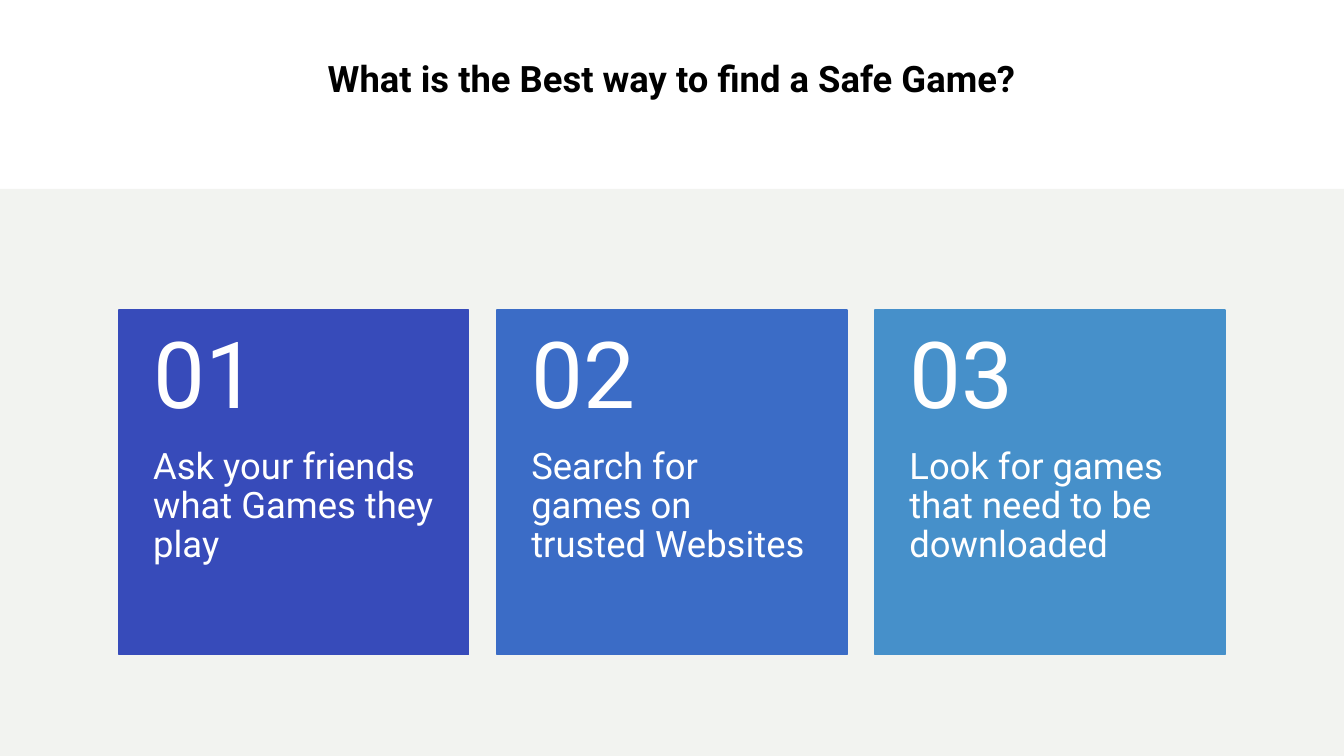
from pptx import Presentation
from pptx import util as u
from pptx.dml.color import RGBColor
from pptx.enum import shapes, text

WHITE = RGBColor(0xFF, 0xFF, 0xFF)
BLACK = RGBColor(0x00, 0x00, 0x00)
PALE_GREY = RGBColor(0xF2, 0xF3, 0xF0)
INDIGO = RGBColor(0x37, 0x4B, 0xBA)
BLUE = RGBColor(0x3B, 0x6C, 0xC6)
SKY = RGBColor(0x46, 0x90, 0xCA)

FONT = "Roboto"
WIDTH, HEIGHT = 13.33, 7.5
MARGIN = 1.18
CARD_WIDTH, CARD_STEP = 3.47, 3.75
NUMBER_SHARE = 0.4  # part of a card's height given to its number

TITLE = "What is the Best way to find a Safe Game?"
CARDS = [
    ("01", "Ask your friends what Games they play", INDIGO),
    ("02", "Search for games on trusted Websites", BLUE),
    ("03", "Look for games that need to be downloaded", SKY),
]


def add_block(s, box, colour, outlined=False):
    sp = s.shapes.add_shape(shapes.MSO_SHAPE.RECTANGLE, *map(u.Inches, box))
    sp.shadow.inherit = False
    sp.fill.solid()
    sp.fill.fore_color.rgb = colour
    if outlined:
        sp.line.color.rgb = colour
        sp.line.width = u.Pt(1)
    else:
        sp.line.fill.background()


def add_text(s, box, words, size, colour, insets, anchor=text.MSO_ANCHOR.TOP):
    """Add a one-paragraph text box and return its paragraph."""
    tf = s.shapes.add_textbox(*map(u.Inches, box)).text_frame
    tf.word_wrap = True
    tf.vertical_anchor = anchor
    tf.margin_left, tf.margin_top, tf.margin_right, tf.margin_bottom = map(u.Inches, insets)
    p = tf.paragraphs[0]
    p.text = words
    p.font.name = FONT
    p.font.size = u.Pt(size)
    p.font.color.rgb = colour
    return p


def add_header(s, box):
    add_block(s, box, WHITE)
    left, top, width, height = box
    title_box = (left + MARGIN, top + 0.26 * height, width - 2 * MARGIN, 0.52 * height)
    p = add_text(s, title_box, TITLE, 26, BLACK, (0.1, 0.07, 0.1, 0.05))
    p.alignment = text.PP_ALIGN.CENTER
    p.font.bold = True


def add_card(s, box, number, advice, colour):
    add_block(s, box, colour, outlined=True)
    left, top, width, height = box
    split = NUMBER_SHARE * height
    advice_p = add_text(s, (left, top + split, width, height - split), advice, 26, WHITE,
                        (0.34, 0, 0.34, 0.36))
    number_p = add_text(s, (left, top, width, split), number, 66, WHITE,
                        (0.34, 0.18, 0.34, 0.18), text.MSO_ANCHOR.MIDDLE)
    for p in (advice_p, number_p):
        p.line_spacing = 0.9


def add_card_band(s, box):
    add_block(s, box, PALE_GREY)
    left, top, _, _ = box
    for i, card in enumerate(CARDS):
        add_card(s, (left + MARGIN + i * CARD_STEP, top + 1.2, CARD_WIDTH, 3.42), *card)


def main():
    prs = Presentation()
    prs.slide_width, prs.slide_height = u.Inches(WIDTH), u.Inches(HEIGHT)
    s = prs.slides.add_slide(prs.slide_layouts[6])
    header_height = 0.25 * HEIGHT
    add_header(s, (0, 0, WIDTH, header_height))
    add_card_band(s, (0, header_height, WIDTH, HEIGHT - header_height))
    prs.save("out.pptx")


if __name__ == "__main__":
    main()
